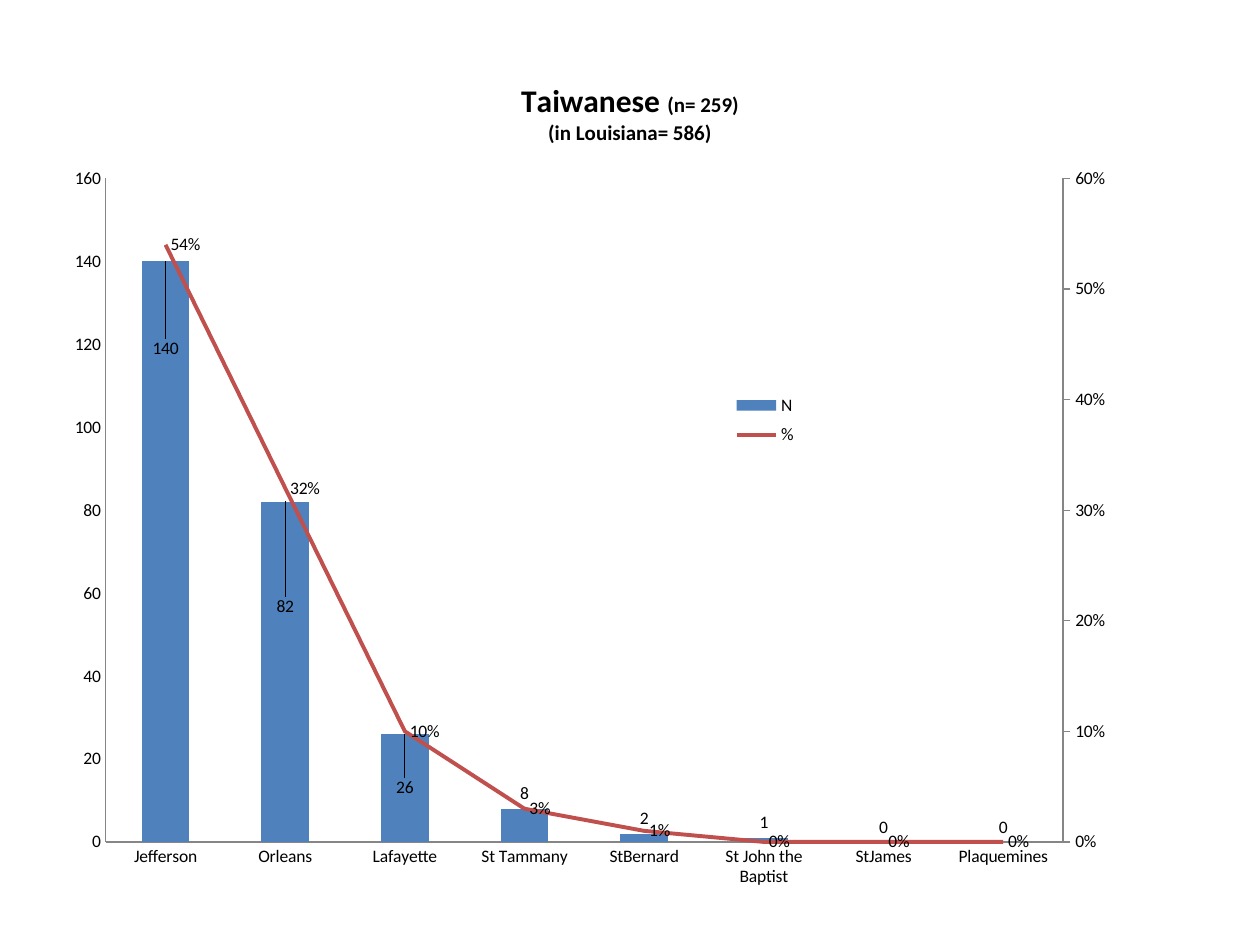
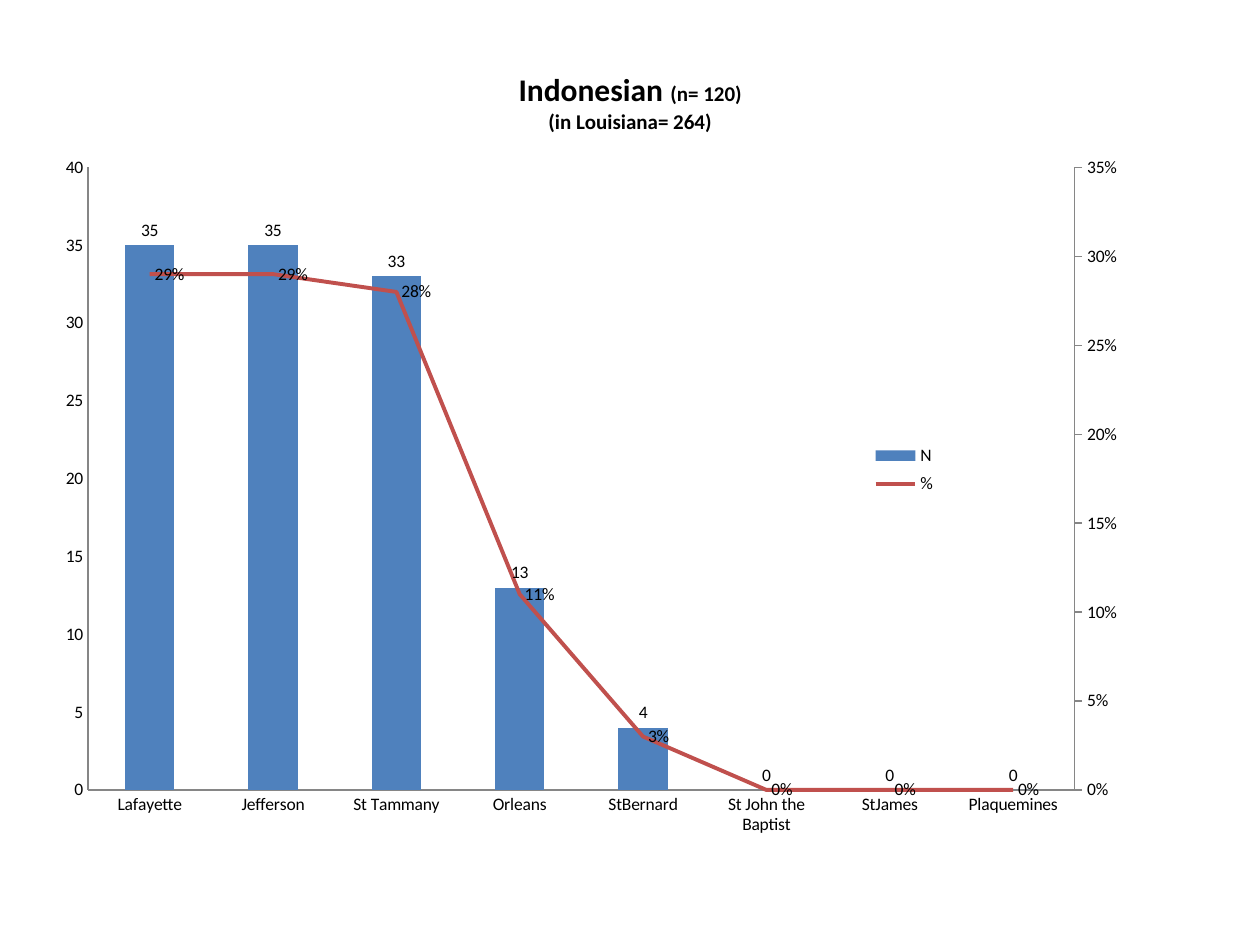
from copy import deepcopy

from lxml.etree import SubElement
from pptx import Presentation
from pptx.chart.axis import ValueAxis
from pptx.chart.data import CategoryChartData
from pptx.dml.color import RGBColor
from pptx.enum.chart import (XL_CHART_TYPE, XL_LABEL_POSITION, XL_LEGEND_POSITION,
                             XL_MARKER_STYLE, XL_TICK_MARK)
from pptx.oxml import parse_xml
from pptx.oxml.ns import nsdecls, qn
from pptx.util import Cm, Pt

COLORS = {"count": "4F81BD", "share": "C0504D", "text": "000000", "axis": "868686"}
BODY_FONT = {"name": "Calibri", "size": Pt(10), "bold": False}
HEADING_FONT = {"name": "Calibri", "size": Pt(18), "bold": True}
DETAIL_FONT = {**HEADING_FONT, "size": Pt(12)}
COUNT_LABELS = {"show_value": True, "position": XL_LABEL_POSITION.OUTSIDE_END}
SHARE_LABELS = {"show_value": True, "position": XL_LABEL_POSITION.RIGHT,
                "number_format": "0%", "number_format_is_linked": False}
SHARE_AXIS_ID, HIDDEN_AXIS_ID = "50010", "50020"

# Layouts are left, top, width, height in percent of the chart.
PARISH_CHARTS = [
    {
        "title": ("Taiwanese ", "(n= 259)", "(in Louisiana= 586)"),
        "frame": (1.06, 1.06, 23.28, 17.15),
        "parishes": ["Jefferson", "Orleans", "Lafayette", "St Tammany", "StBernard",
                     "St John the Baptist", "StJames", "Plaquemines"],
        "counts": [140, 82, 26, 8, 2, 1, 0, 0],
        "shares": [0.54, 0.32, 0.1, 0.03, 0.01, 0, 0, 0],
        "count_scale": (160, 20),
        "share_scale": (0.6, 0.1),
        "plot_layout": (4.6, 14.8, 82.9, 78),
        "legend_layout": (58.7, 39.2, 6, 8),
        "label_drops": [12, 14, 8],
    },
    {
        "title": ("Indonesian ", "(n= 120)", "(in Louisiana= 264)"),
        "frame": (0.85, 0.85, 23.71, 16.3),
        "parishes": ["Lafayette", "Jefferson", "St Tammany", "Orleans", "StBernard",
                     "St John the Baptist", "StJames", "Plaquemines"],
        "counts": [35, 35, 33, 13, 4, 0, 0, 0],
        "shares": [0.29, 0.29, 0.28, 0.11, 0.03, 0, 0, 0],
        "count_scale": (40, 5),
        "share_scale": (0.35, 0.05),
        "plot_layout": (3.9, 15.5, 83.9, 77),
        "legend_layout": (70.3, 48.9, 6, 8),
        "label_drops": [],
    },
]


def apply_format(target, values):
    for name, value in values.items():
        setattr(target, name, value)


def color(name):
    return RGBColor.from_string(COLORS[name])


def make_layout(parent, **values):
    """Return a manual layout element, to be placed where the schema wants it."""
    layout = SubElement(parent, qn("c:layout"))
    manual = SubElement(layout, qn("c:manualLayout"))
    for name, value in values.items():
        SubElement(manual, qn(f"c:{name}")).set("val", str(value))
    return layout


def box_layout(parent, box, **target):
    left, top, width, height = (round(percent / 100, 4) for percent in box)
    return make_layout(parent, **target, xMode="edge", yMode="edge",
                       x=left, y=top, w=width, h=height)


class ChartDeck:
    def __init__(self):
        self.presentation = Presentation()
        apply_format(self.presentation, {"slide_width": Cm(25.4), "slide_height": Cm(19.05)})
        self.slide = None

    def add_slide(self):
        self.slide = self.presentation.slides.add_slide(self.presentation.slide_layouts[6])

    def style_font(self, font, values):
        apply_format(font, values)
        font.color.rgb = color("text")

    def add_parish_chart(self, details):
        data = CategoryChartData()
        data.categories = details["parishes"]
        data.add_series("N", details["counts"], "General")
        data.add_series("%", details["shares"], "0%")
        frame = self.slide.shapes.add_chart(
            XL_CHART_TYPE.COLUMN_CLUSTERED, *map(Cm, details["frame"]), data)
        chart = frame.chart
        self.style_font(chart.font, BODY_FONT)
        self.add_title(chart, *details["title"])
        self.style_axes(chart, details["count_scale"])
        self.move_shares_to_line(chart, details["share_scale"])
        self.style_counts(chart.plots[0], details["label_drops"])
        self.style_shares(chart.plots[1])
        self.add_legend(chart, details["legend_layout"])
        plot_area = chart.element.xpath("c:chart/c:plotArea")[0]
        for layout in plot_area.findall(qn("c:layout")):
            plot_area.remove(layout)
        plot_area.insert(0, box_layout(plot_area, details["plot_layout"], layoutTarget="inner"))

    def add_title(self, chart, group, total, state_total):
        chart.has_title = True
        text_frame = chart.chart_title.text_frame
        first, second = text_frame.paragraphs[0], text_frame.add_paragraph()
        for paragraph, text, font in ((first, group, HEADING_FONT),
                                      (first, total, DETAIL_FONT),
                                      (second, state_total, DETAIL_FONT)):
            run = paragraph.add_run()
            run.text = text
            self.style_font(run.font, font)

    def style_axes(self, chart, scale):
        for axis in (chart.category_axis, chart.value_axis):
            apply_format(axis, {"has_major_gridlines": False,
                                "major_tick_mark": XL_TICK_MARK.NONE,
                                "minor_tick_mark": XL_TICK_MARK.NONE})
            axis.format.line.color.rgb = color("axis")
            axis.format.line.width = Pt(0.75)
        self.set_scale(chart.value_axis, scale, "General")

    def set_scale(self, axis, scale, number_format):
        maximum, step = scale
        apply_format(axis, {"minimum_scale": 0, "maximum_scale": maximum, "major_unit": step})
        apply_format(axis.tick_labels, {"number_format": number_format,
                                        "number_format_is_linked": False})

    def move_shares_to_line(self, chart, scale):
        """Turn the second series into a line on its own axis at the right."""
        bar_chart = chart.element.xpath("c:chart/c:plotArea/c:barChart")[0]
        series = bar_chart.findall(qn("c:ser"))[1]
        for flag in series.findall(qn("c:invertIfNegative")):
            series.remove(flag)
        line_chart = parse_xml(
            f'<c:lineChart {nsdecls("c")}><c:grouping val="standard"/><c:varyColors val="0"/>'
            f'<c:marker val="1"/><c:axId val="{HIDDEN_AXIS_ID}"/>'
            f'<c:axId val="{SHARE_AXIS_ID}"/></c:lineChart>')
        line_chart.insert(2, series)
        bar_chart.addnext(line_chart)

        value_axis = chart.element.xpath("c:chart/c:plotArea/c:valAx")[0]
        category_axis = chart.element.xpath("c:chart/c:plotArea/c:catAx")[0]
        share_axis, hidden_axis = deepcopy(value_axis), deepcopy(category_axis)
        value_axis.addnext(share_axis)
        share_axis.addnext(hidden_axis)
        settings = (
            (share_axis, {"axId": SHARE_AXIS_ID, "crossAx": HIDDEN_AXIS_ID,
                          "axPos": "r", "crosses": "max"}),
            (hidden_axis, {"axId": HIDDEN_AXIS_ID, "crossAx": SHARE_AXIS_ID}),
        )
        for axis, values in settings:
            for name, value in values.items():
                axis.find(qn(f"c:{name}")).set("val", value)
        ValueAxis(hidden_axis).visible = False
        right_axis = ValueAxis(share_axis)
        right_axis.major_tick_mark = XL_TICK_MARK.OUTSIDE
        self.set_scale(right_axis, scale, "0%")

    def style_counts(self, plot, label_drops):
        apply_format(plot, {"gap_width": 150, "vary_by_categories": False})
        series = plot.series[0]
        series.format.fill.solid()
        series.format.fill.fore_color.rgb = color("count")
        apply_format(series.data_labels, COUNT_LABELS)
        for index, drop in enumerate(label_drops):
            series.points[index].data_label.position = XL_LABEL_POSITION.OUTSIDE_END
            label = series.data_labels._element.findall(qn("c:dLbl"))[index]
            label.insert(1, make_layout(label, x=0, y=drop / 100))

    def style_shares(self, plot):
        series = plot.series[0]
        series.smooth = False
        series.marker.style = XL_MARKER_STYLE.NONE
        series.format.line.color.rgb = color("share")
        series.format.line.width = Pt(2.25)
        apply_format(series.data_labels, SHARE_LABELS)

    def add_legend(self, chart, box):
        chart.has_legend = True
        legend = chart.legend
        apply_format(legend, {"position": XL_LEGEND_POSITION.RIGHT, "include_in_layout": False})
        element = chart.element.xpath("c:chart/c:legend")[0]
        for layout in element.findall(qn("c:layout")):
            element.remove(layout)
        element.find(qn("c:legendPos")).addnext(box_layout(element, box))


def main():
    deck = ChartDeck()
    for details in PARISH_CHARTS:
        deck.add_slide()
        deck.add_parish_chart(details)
    deck.presentation.save("out.pptx")


if __name__ == "__main__":
    main()
